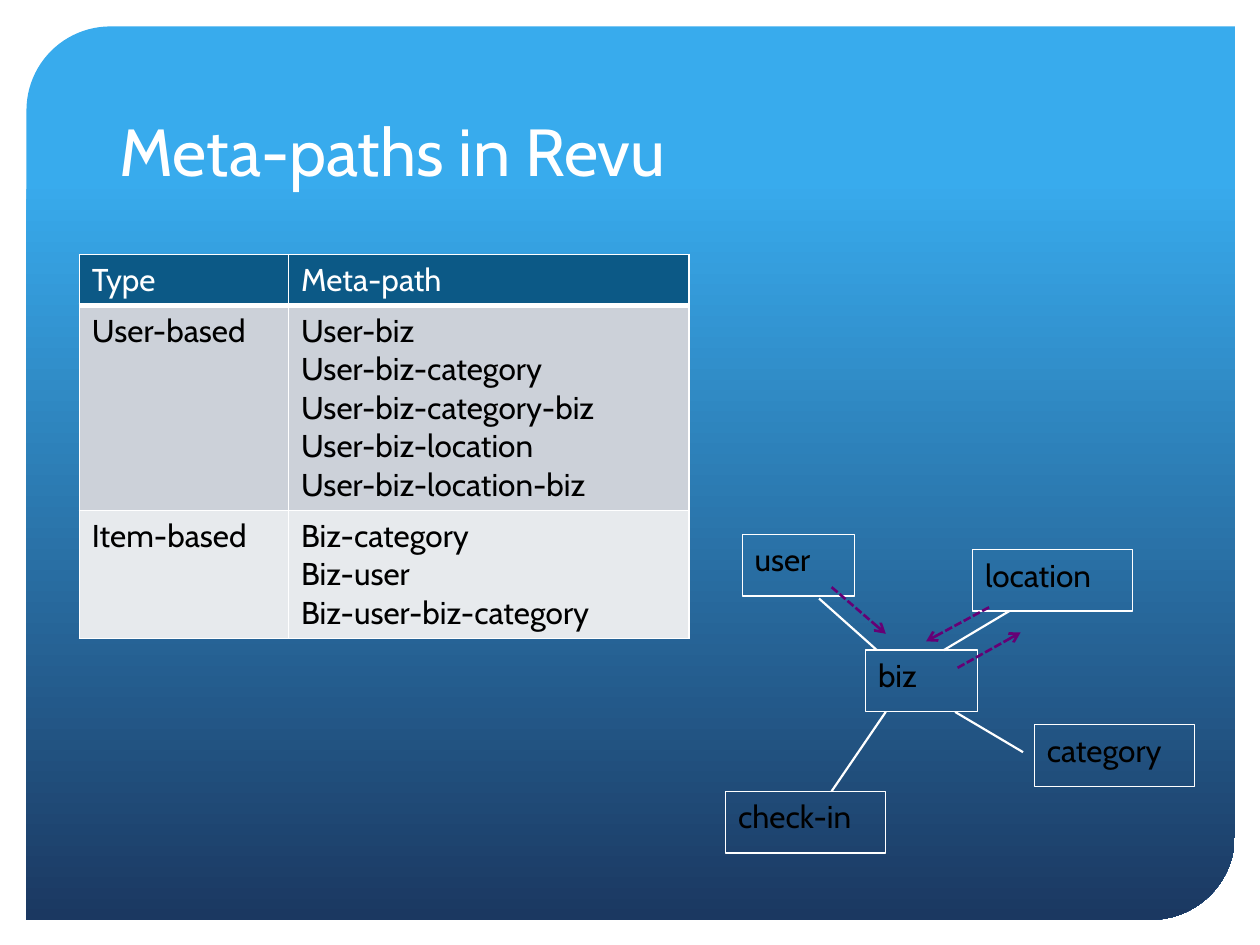
from lxml import etree
from pptx import Presentation
from pptx import util as u
from pptx.dml.color import RGBColor
from pptx.enum import dml, shapes, text
from pptx.oxml.ns import qn

WHITE = RGBColor(0xFF, 0xFF, 0xFF)
BLACK = RGBColor(0x00, 0x00, 0x00)
SKY = RGBColor(0x38, 0xAB, 0xED)
NAVY = RGBColor(0x1B, 0x38, 0x61)
HEADER = RGBColor(0x0C, 0x59, 0x86)
BAND_DARK = RGBColor(0xCC, 0xD1, 0xD9)
BAND_LIGHT = RGBColor(0xE7, 0xEA, 0xED)
PURPLE = RGBColor(0x66, 0x00, 0x75)


class SlideBuilder:
    """Holds the style and the current slide."""

    font = {"name": "Cabin", "size": u.Pt(18), "bold": False}

    def __init__(self, prs):
        self.s = prs.slides.add_slide(prs.slide_layouts[5])

    def fill_text(self, tf, lines, color, **changes):
        tf.word_wrap = True
        for i, line in enumerate(lines):
            p = tf.paragraphs[0] if i == 0 else tf.add_paragraph()
            p.alignment = text.PP_ALIGN.LEFT
            r = p.add_run()
            r.text = line
            for key, value in {**self.font, **changes}.items():
                setattr(r.font, key, value)
            r.font.color.rgb = color

    def shape(self, kind, *box):
        sp = self.s.shapes.add_shape(kind, *map(u.Inches, box))
        sp.shadow.inherit = False
        return sp

    def backdrop(self, *box):
        sp = self.shape(shapes.MSO_SHAPE.ROUND_2_DIAG_RECTANGLE, *box)
        sp.adjustments[0] = 0.094
        sp.line.fill.background()
        sp.fill.gradient()
        sp.fill.gradient_angle = 270
        stops = sp.fill.gradient_stops
        for stop, position, color in zip(stops, (0.17, 1), (SKY, NAVY)):
            stop.position = position
            stop.color.rgb = color
        # Send behind the title
        self.s.shapes._spTree.insert(2, sp._element)

    def title(self, words, *box):
        sp = self.s.shapes.title
        sp.left, sp.top, sp.width, sp.height = map(u.Inches, box)
        tf = sp.text_frame
        tf.vertical_anchor = text.MSO_ANCHOR.BOTTOM
        self.fill_text(tf, [words], WHITE, size=u.Pt(38))

    def borders(self, cell, bottom):
        tcPr = cell._tc.get_or_add_tcPr()
        for i, (side, points) in enumerate(
                (("L", 1), ("R", 1), ("T", 1), ("B", bottom))):
            ln = etree.Element(qn("a:ln" + side), w=str(u.Pt(points)))
            fill = etree.SubElement(ln, qn("a:solidFill"))
            etree.SubElement(fill, qn("a:srgbClr"), val=str(WHITE))
            tcPr.insert(i, ln)

    def table(self, rows, widths, heights, fills, *box):
        table = self.s.shapes.add_table(
            len(rows), len(widths), *map(u.Inches, box)).table
        for column, width in zip(table.columns, widths):
            column.width = u.Inches(width)
        for i, row in enumerate(rows):
            table.rows[i].height = u.Inches(heights[i])
            for j, lines in enumerate(row):
                cell = table.cell(i, j)
                cell.fill.solid()
                cell.fill.fore_color.rgb = fills[i]
                self.borders(cell, 1 if i else 3)
                self.fill_text(cell.text_frame, lines, BLACK if i else WHITE)

    def node(self, label, left, top, width):
        sp = self.shape(shapes.MSO_SHAPE.RECTANGLE, left, top, width, 0.49)
        sp.fill.background()
        sp.line.color.rgb = WHITE
        sp.line.width = u.Pt(0.75)
        sp.text_frame.vertical_anchor = text.MSO_ANCHOR.TOP
        self.fill_text(sp.text_frame, [label], BLACK)

    def line(self, ends, color, width):
        c = self.s.shapes.add_connector(
            shapes.MSO_CONNECTOR.STRAIGHT, *map(u.Inches, ends))
        c.line.color.rgb = color
        c.line.width = u.Pt(width)
        etree.SubElement(c._element.spPr, qn("a:effectLst"))
        return c

    def arrow(self, ends):
        c = self.line(ends, PURPLE, 1.5)
        c.line.dash_style = dml.MSO_LINE.SQUARE_DOT
        ln = c._element.spPr.find(qn("a:ln"))
        etree.SubElement(ln, qn("a:tailEnd"), type="arrow")


def main():
    prs = Presentation()
    prs.slide_width, prs.slide_height = u.Inches(10), u.Inches(7.5)
    slide = SlideBuilder(prs)

    # Background and title
    slide.backdrop(0.21, 0.21, 9.59, 7.09)
    slide.title("Meta-paths in Revu", 0.85, 0.42, 8.29, 1.14)

    # Table of meta-paths
    rows = [
        (["Type"], ["Meta-path"]),
        (["User-based"], ["User-biz", "User-biz-category",
                          "User-biz-category-biz", "User-biz-location",
                          "User-biz-location-biz"]),
        (["Item-based"], ["Biz-category", "Biz-user",
                          "Biz-user-biz-category"]),
    ]
    slide.table(rows, (1.66, 3.18), (0.38, 1.48, 0.92),
                (HEADER, BAND_DARK, BAND_LIGHT), 0.63, 2.02, 4.83, 3)

    # Network nodes
    for label, left, top, width in (
            ("user", 5.89, 4.24, 0.89),
            ("biz", 6.87, 5.16, 0.89),
            ("category", 8.21, 5.75, 1.27),
            ("check-in", 5.76, 6.28, 1.27),
            ("location", 7.72, 4.36, 1.27)):
        slide.node(label, left, top, width)

    # Network links
    for ends in ((6.5, 4.75, 6.96, 5.16), (7.49, 5.16, 8.01, 4.85),
                 (7.03, 5.65, 6.6, 6.28), (7.58, 5.65, 8.12, 5.97)):
        slide.line(ends, WHITE, 1.25)

    # Walk along a meta-path
    for ends in ((6.6, 4.66, 7.03, 5.03), (7.6, 5.3, 8.1, 5.02),
                 (7.85, 4.82, 7.35, 5.09)):
        slide.arrow(ends)

    prs.save("out.pptx")


if __name__ == "__main__":
    main()
